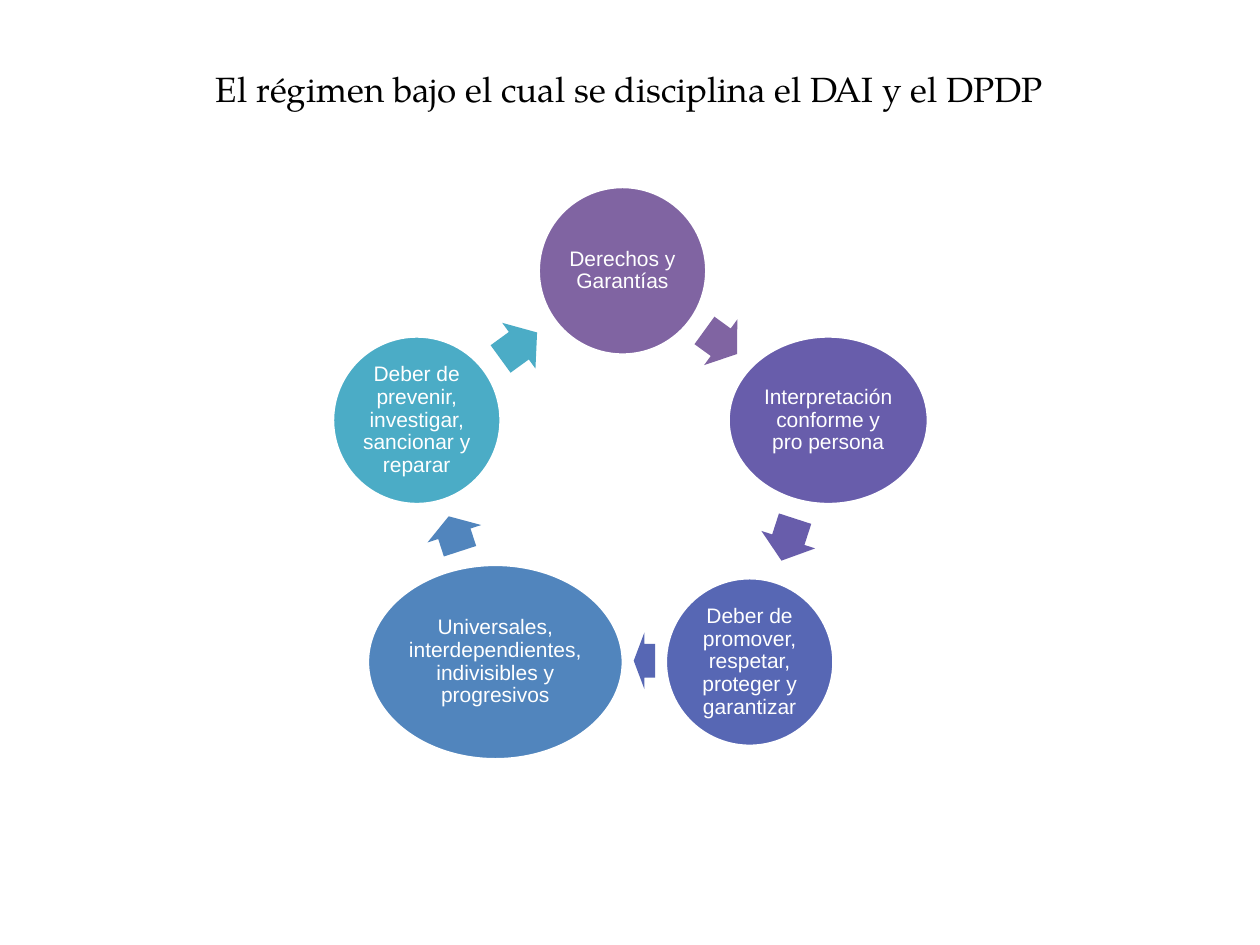
from math import cos, radians, sin

from pptx import Presentation
from pptx.dml.color import RGBColor
from pptx.enum.shapes import MSO_SHAPE
from pptx.enum.text import MSO_ANCHOR, PP_ALIGN
from pptx.util import Cm, Pt

BLACK = RGBColor(0x00, 0x00, 0x00)
WHITE = RGBColor(0xFF, 0xFF, 0xFF)
PURPLE = RGBColor(0x80, 0x64, 0xA2)
VIOLET = RGBColor(0x68, 0x5D, 0xAB)
INDIGO = RGBColor(0x57, 0x67, 0xB4)
BLUE = RGBColor(0x51, 0x85, 0xBD)
TEAL = RGBColor(0x4B, 0xAC, 0xC6)

CENTER_X, CENTER_Y, RADIUS = 12.55, 9.82, 4.36
ARROW_HEIGHT = 1.14
STEPS = [
    ("Derechos y Garantías", PURPLE, (3.4, 3.4), (14.53, 6.9, 0.81)),
    ("Interpretación conforme y pro persona", VIOLET, (4.04, 3.4), (15.89, 10.88, 0.89)),
    ("Deber de promover, respetar, proteger y garantizar", INDIGO, (3.4, 3.4), (12.99, 13.32, 0.43)),
    ("Universales, interdependientes,indivisibles y progresivos", BLUE, (5.16, 3.94), (9.16, 10.76, 0.74)),
    ("Deber de prevenir, investigar, sancionar y reparar", TEAL, (3.4, 3.4), (10.46, 6.97, 0.91)),
]


class CycleSlide:
    title_font = {"name": "TeX Gyre Pagella", "size": Pt(20)}
    step_font = {"name": "Arial", "size": Pt(12)}
    margin = Cm(0.05)

    def __init__(self, prs):
        self.s = prs.slides.add_slide(prs.slide_layouts[5])

    def text(self, tf, text, style, color):
        tf.word_wrap = True
        tf.vertical_anchor = MSO_ANCHOR.MIDDLE
        p = tf.paragraphs[0]
        p.alignment = PP_ALIGN.CENTER
        r = p.add_run()
        r.text = text
        for key, value in style.items():
            setattr(r.font, key, value)
        r.font.color.rgb = color
        return p

    def title(self, text, left, top, width, height):
        sp = self.s.shapes.title
        box = {"left": left, "top": top, "width": width, "height": height}
        for key, value in box.items():
            setattr(sp, key, Cm(value))
        self.text(sp.text_frame, text, self.title_font, BLACK)

    def shape(self, kind, x, y, width, height, color):
        sp = self.s.shapes.add_shape(
            kind, Cm(x - width / 2), Cm(y - height / 2), Cm(width), Cm(height))
        sp.shadow.inherit = False
        sp.fill.solid()
        sp.fill.fore_color.rgb = color
        return sp

    def step(self, text, x, y, width, height, color):
        sp = self.shape(MSO_SHAPE.OVAL, x, y, width, height, color)
        sp.line.color.rgb = WHITE
        sp.line.width = Pt(2)
        tf = sp.text_frame
        for side in ("left", "top", "right", "bottom"):
            setattr(tf, f"margin_{side}", self.margin)
        self.text(tf, text, self.step_font, WHITE).line_spacing = 0.9

    def arrow(self, x, y, length, rotation, color):
        sp = self.shape(MSO_SHAPE.RIGHT_ARROW, x, y, length, ARROW_HEIGHT, color)
        sp.line.fill.background()
        sp.adjustments[0] = 0.6
        sp.adjustments[1] = 0.5
        sp.rotation = rotation


def main():
    prs = Presentation()
    prs.slide_width, prs.slide_height = Cm(25.4), Cm(19.05)
    slide = CycleSlide(prs)
    slide.title("El régimen bajo el cual se disciplina el DAI y el DPDP", 1.27, 0.48, 22.86, 2.59)
    turn = 360 / len(STEPS)
    for i, (text, color, size, arrow) in enumerate(STEPS):
        angle = radians(i * turn)
        x = CENTER_X + RADIUS * sin(angle)
        y = CENTER_Y - RADIUS * cos(angle)
        slide.step(text, x, y, *size, color)
        slide.arrow(*arrow, turn / 2 + i * turn, color)
    prs.save("out.pptx")


if __name__ == "__main__":
    main()
